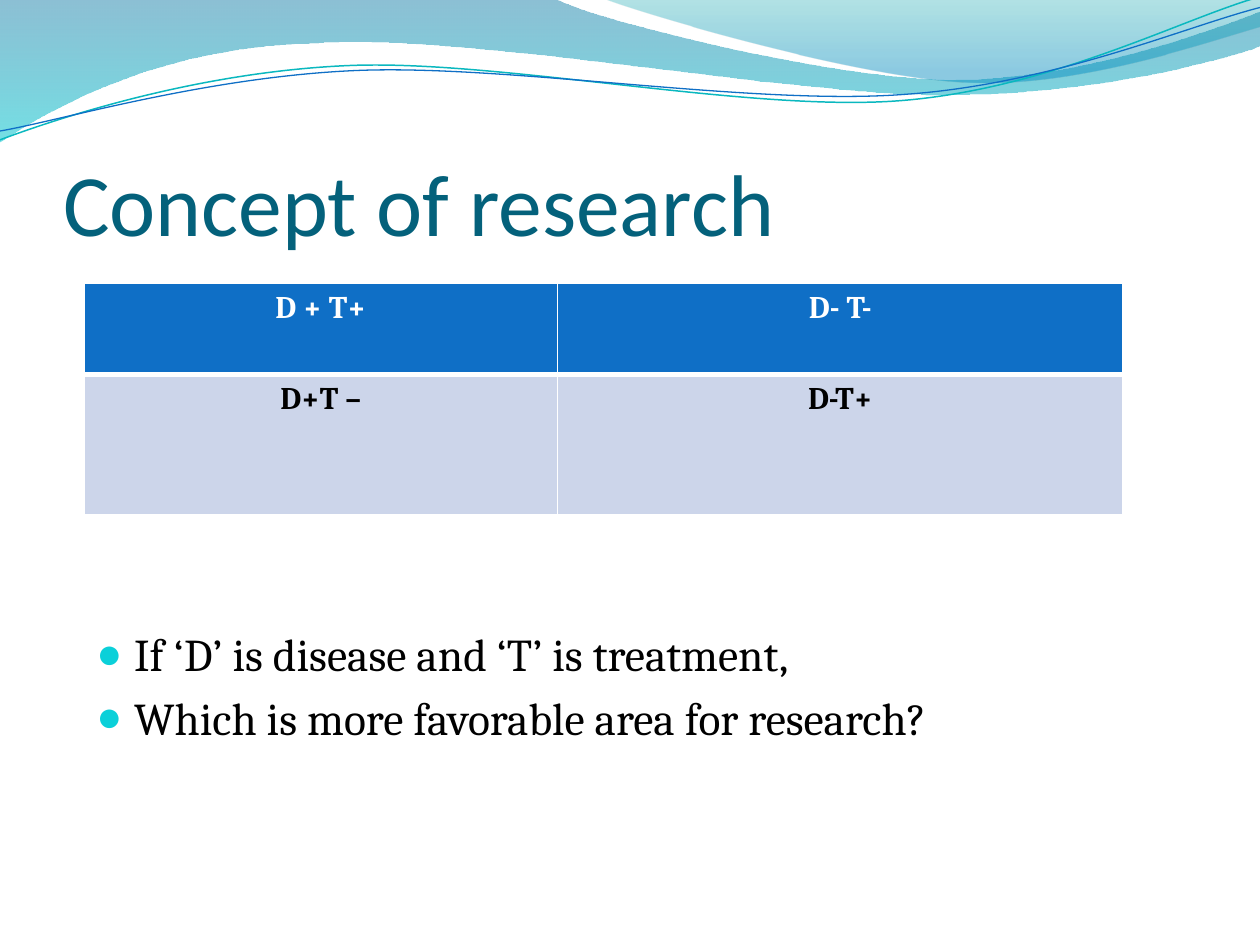
"""Builds the "Concept of research" slide with a wave banner, a table and a list."""
import math
from dataclasses import dataclass

from lxml import etree
from pptx import Presentation
from pptx import util as u
from pptx.dml.color import RGBColor
from pptx.enum import text
from pptx.oxml import ns

BANNER_UNIT = 2.54
LINE_TILT = 357.3


@dataclass(frozen=True)
class Theme:
    """Colours, fonts and type sizes of the slide."""
    heading: str = "04617B"
    ink: str = "000000"
    white: str = "FFFFFF"
    header: str = "0F6FC6"
    row: str = "CCD5EA"
    bullet: str = "0BD0D9"
    teal_line: str = "0AB8BF"
    heading_font: str = "Calibri"
    text_font: str = "Cambria"
    heading_size: int = 50
    list_size: int = 26
    table_size: int = 18


THEME = Theme()

WAVE_BANDS = [
    ([(0, 0), (4.4, -0.01),
      (4.76, 0.17, 6.64, 0.63, 7.58, 0.63), (8.53, 0.63, 9.58, 0.26, 10, 0.09),
      (10.01, 0.36),
      (9.83, 0.44, 8.7, 0.76, 7.46, 0.75), (6.22, 0.75, 3.82, 0.28, 2.57, 0.34),
      (1.29, 0.36, 0.46, 0.83, -0.01, 1.13), (0, 0)],
     [(0, "0074A1", 45), (1, "00C6CF", 55)]),
    ([(4.79, -0.01),
      (5.09, 0.11, 6.82, 0.62, 7.69, 0.65), (8.56, 0.69, 9.61, 0.32, 10, 0.21),
      (10, 0), (4.79, -0.01)],
     [(0, "00A1A9", 30), (0.8, "008BBF", 45)]),
]
WAVE_LINES = [
    ([(0, 1.11), (0.48, 0.93, 1.58, 0.57, 2.77, 0.52),
      (3.95, 0.47, 5.93, 0.89, 7.13, 0.8), (8.33, 0.71, 9.38, 0.15, 9.98, -0.02)],
     (4.99, 0.58), THEME.teal_line, 0.85),
    ([(0, 1.04), (0.47, 0.96, 1.64, 0.61, 2.83, 0.56),
      (4.03, 0.51, 5.97, 0.84, 7.17, 0.75), (8.36, 0.67, 9.41, 0.21, 10, 0.06)],
     (5, 0.59), THEME.header, 0.75),
]
TREATMENT_GRID = [["D + T+", "D- T-"], ["D+T –", "D-T+"]]
QUESTIONS = ["If ‘D’ is disease and ‘T’ is treatment,",
             "Which is more favorable area for research?"]


def rgb(value):
    """Return a colour object for a hex string."""
    return RGBColor.from_string(value)


def add_child(parent, tag, **attributes):
    """Append a DrawingML element to a parent."""
    names = {key: str(value) for key, value in attributes.items()}
    return etree.SubElement(parent, ns.qn(tag), names)


def place(shape, left, top, width, height):
    """Set the position and size of a shape in centimetres."""
    shape.left, shape.top = u.Cm(left), u.Cm(top)
    shape.width, shape.height = u.Cm(width), u.Cm(height)


def add_run(paragraph, words, font, size, colour, bold=False):
    """Add one formatted run to a paragraph."""
    run = paragraph.add_run()
    run.text = words
    run.font.name, run.font.size, run.font.bold = font, u.Pt(size), bold
    run.font.color.rgb = rgb(colour)


def level(segments, pivot):
    """Turn tilted segments back to the horizontal around a pivot."""
    angle = math.radians(360 - LINE_TILT)
    cos, sin = math.cos(angle), math.sin(angle)
    leveled = []
    for segment in segments:
        offsets = [(x - pivot[0], y - pivot[1])
                   for x, y in zip(segment[::2], segment[1::2])]
        leveled.append(tuple(value for x, y in offsets for value in
                             (pivot[0] + x * cos - y * sin,
                              pivot[1] + x * sin + y * cos)))
    return leveled


def add_outline(slide, segments, close):
    """Add a freeform of straight and cubic segments."""
    start, *points = [(u.Cm(x * BANNER_UNIT), u.Cm(y * BANNER_UNIT))
                      for segment in segments
                      for x, y in zip(segment[::2], segment[1::2])]
    builder = slide.shapes.build_freeform(*start, scale=1.0)
    outline = builder.add_line_segments(points, close=close).convert_to_shape()
    outline.shadow.inherit = False
    steps = iter(list(outline._element.iter(ns.qn("a:lnTo"))))
    for segment in segments[1:]:
        first, *others = [next(steps) for _ in segment[::2]]
        if others:
            first.tag = ns.qn("a:cubicBezTo")
        for step in others:
            first.append(step[0])
            step.getparent().remove(step)
    return outline


def add_wave_band(slide, segments, stops):
    """Add a translucent band with a downward gradient."""
    band = add_outline(slide, segments, close=True)
    band.line.fill.background()
    band.fill.gradient()
    band.fill.gradient_angle = 270
    for stop, (position, colour, opacity) in zip(band.fill.gradient_stops, stops):
        stop.position = position
        stop.color.rgb = rgb(colour)
    for colour_node, stop in zip(band._element.spPr.iter(ns.qn("a:srgbClr")), stops):
        add_child(colour_node, "a:alpha", val=stop[2] * 1000)
    return band


def add_wave_line(slide, segments, pivot, colour, weight):
    """Add a thin, slightly tilted curved line."""
    wave = add_outline(slide, level(segments, pivot), close=False)
    wave.rotation = LINE_TILT
    wave.fill.background()
    wave.line.color.rgb = rgb(colour)
    wave.line.width = u.Pt(weight)
    return wave


def add_banner(slide):
    """Add the wave banner behind the placeholders."""
    waves = [add_wave_band(slide, *band) for band in WAVE_BANDS]
    waves += [add_wave_line(slide, *line) for line in WAVE_LINES]
    for order, wave in enumerate(waves, start=2):
        slide.shapes._spTree.insert(order, wave._element)


def fill_title(title):
    """Place and write the heading."""
    place(title, 1.27, 1.95, 22.86, 3.18)
    frame = title.text_frame
    frame.margin_left = frame.margin_right = frame.margin_bottom = 0
    frame.vertical_anchor = text.MSO_ANCHOR.BOTTOM
    heading = frame.paragraphs[0]
    heading.alignment = text.PP_ALIGN.LEFT
    add_run(heading, "Concept of research", THEME.heading_font,
            THEME.heading_size, THEME.heading)


def fill_list(body):
    """Place and write the bulleted questions."""
    place(body, 1.69, 12.49, 20.52, 4.24)
    frame = body.text_frame
    for number, question in enumerate(QUESTIONS):
        item = frame.add_paragraph() if number else frame.paragraphs[0]
        item.space_before = u.Pt(THEME.list_size * 0.2)
        properties = item._p.get_or_add_pPr()
        properties.set("marL", str(u.Cm(0.76)))
        properties.set("indent", str(u.Cm(-0.76)))
        add_child(add_child(properties, "a:buClr"), "a:srgbClr", val=THEME.bullet)
        add_child(properties, "a:buSzPct", val=95000)
        add_child(properties, "a:buChar", char="●")
        add_run(item, question, THEME.text_font, THEME.list_size, THEME.ink)


def style_cell(cell, words, is_header):
    """Write one table cell with its fill and white borders."""
    weights = {"L": 1, "R": 1, "T": 1 if is_header else 3, "B": 3 if is_header else 1}
    for side, weight in weights.items():
        border = add_child(cell._tc.get_or_add_tcPr(), f"a:ln{side}", w=u.Pt(weight))
        add_child(add_child(border, "a:solidFill"), "a:srgbClr", val=THEME.white)
    cell.fill.solid()
    cell.fill.fore_color.rgb = rgb(THEME.header if is_header else THEME.row)
    cell.margin_left = cell.margin_right = u.Cm(0.13)
    label = cell.text_frame.paragraphs[0]
    label.alignment = text.PP_ALIGN.CENTER
    add_run(label, words, THEME.text_font, THEME.table_size,
            THEME.white if is_header else THEME.ink, bold=True)


def add_treatment_table(slide):
    """Add the disease and treatment table."""
    table = slide.shapes.add_table(2, 2, u.Cm(1.69), u.Cm(5.72),
                                   u.Cm(20.95), u.Cm(4.65)).table
    for column, width in zip(table.columns, (9.55, 11.4)):
        column.width = u.Cm(width)
    for row, height in zip(table.rows, (1.83, 2.82)):
        row.height = u.Cm(height)
    for r, labels in enumerate(TREATMENT_GRID):
        for c, words in enumerate(labels):
            style_cell(table.cell(r, c), words, is_header=r == 0)


def main():
    """Build and save the slide."""
    deck = Presentation()
    deck.slide_width, deck.slide_height = u.Cm(25.4), u.Cm(19.05)
    slide = deck.slides.add_slide(deck.slide_layouts[1])
    add_banner(slide)
    fill_title(slide.shapes.title)
    add_treatment_table(slide)
    fill_list(slide.placeholders[1])
    deck.save("out.pptx")


if __name__ == "__main__":
    main()
